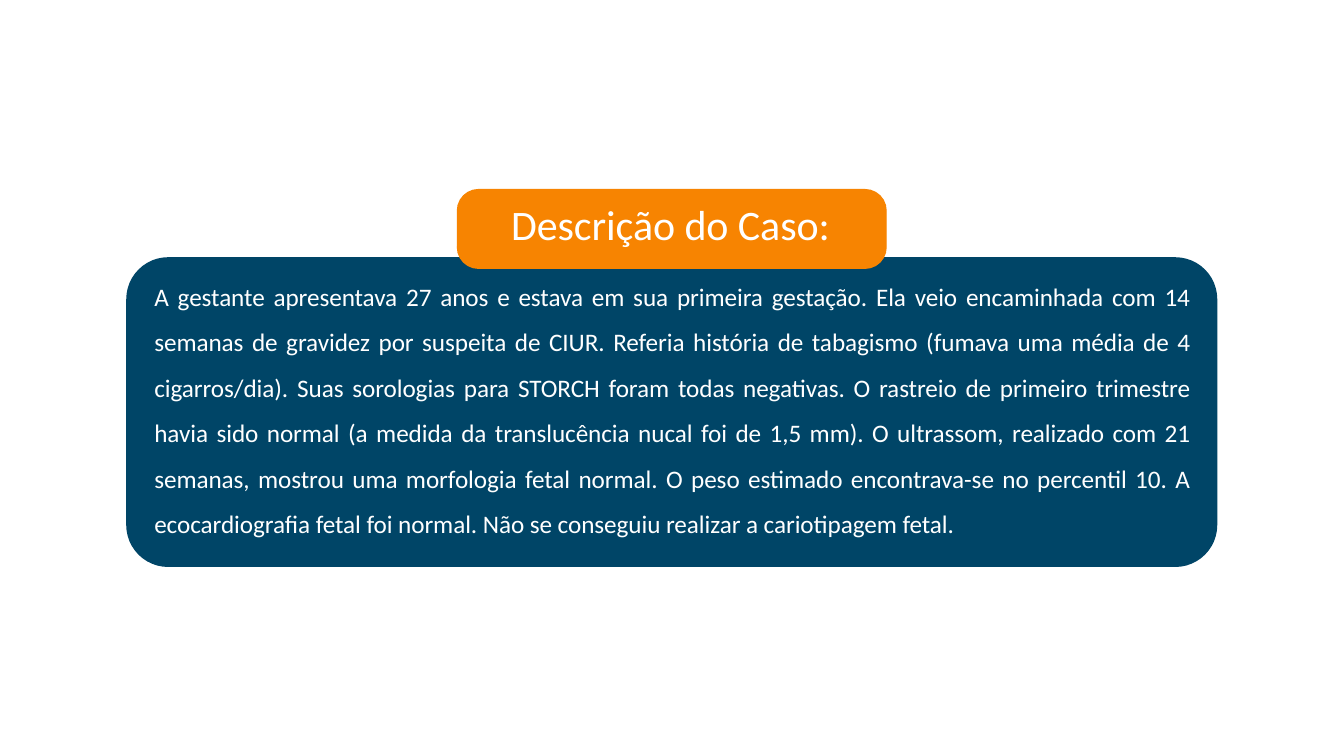
from pptx import Presentation
from pptx.dml.color import RGBColor
from pptx.enum.shapes import MSO_SHAPE
from pptx.enum.text import PP_ALIGN
from pptx.util import Cm, Pt

NAVY = RGBColor(0x00, 0x45, 0x67)
ORANGE = RGBColor(0xF7, 0x84, 0x01)
WHITE = RGBColor(0xFF, 0xFF, 0xFF)
ROUNDED = MSO_SHAPE.ROUNDED_RECTANGLE
LEFT, JUSTIFY = PP_ALIGN.LEFT, PP_ALIGN.JUSTIFY

CASE = (
    "A gestante apresentava 27 anos e estava em sua primeira gestação. "
    "Ela veio encaminhada com 14 semanas de gravidez por suspeita de CIUR. "
    "Referia história de tabagismo (fumava uma média de 4 cigarros/dia). "
    "Suas sorologias para STORCH foram todas negativas. "
    "O rastreio de primeiro trimestre havia sido normal "
    "(a medida da translucência nucal foi de 1,5 mm). "
    "O ultrassom, realizado com 21 semanas, mostrou uma morfologia fetal normal. "
    "O peso estimado encontrava-se no percentil 10. "
    "A ecocardiografia fetal foi normal. "
    "Não se conseguiu realizar a cariotipagem fetal."
)


class SlideBuilder:
    font = "Calibri"
    color = WHITE
    tracking = "-5"  # hundredths of a point

    def __init__(self, slide):
        self.s = slide

    def panel(self, x, y, w, h, radius, color):
        sp = self.s.shapes.add_shape(ROUNDED, Cm(x), Cm(y), Cm(w), Cm(h))
        sp.adjustments[0] = radius / min(w, h)
        sp.shadow.inherit = False
        sp.fill.solid()
        sp.fill.fore_color.rgb = color
        sp.line.color.rgb = color
        sp.line.width = Pt(1)

    def text(self, x, y, w, h, text, size, align=LEFT, spacing=1.0):
        tf = self.s.shapes.add_textbox(Cm(x), Cm(y), Cm(w), Cm(h)).text_frame
        tf.word_wrap = True
        tf.margin_left = tf.margin_right = tf.margin_bottom = 0
        tf.margin_top = Cm(0.03)
        p = tf.paragraphs[0]
        p.alignment = align
        p.line_spacing = spacing
        p.font.name = self.font
        p.font.size = Pt(size)
        p.font.color.rgb = self.color
        r = p.add_run()
        r.text = text
        r.font._element.set("spc", self.tracking)


def main():
    prs = Presentation()
    prs.slide_width, prs.slide_height = Cm(33.87), Cm(19.05)
    slide = SlideBuilder(prs.slides.add_slide(prs.slide_layouts[6]))

    slide.panel(3.2, 6.5, 27.46, 7.77, 1.04, NAVY)
    slide.panel(11.53, 4.78, 10.8, 1.98, 0.53, ORANGE)
    slide.text(12.88, 4.97, 8.15, 1.35, "Descrição do Caso:", 30)
    slide.text(3.89, 6.68, 26.11, 6.96, CASE, 18, JUSTIFY, 1.5)

    prs.save("out.pptx")


if __name__ == "__main__":
    main()
